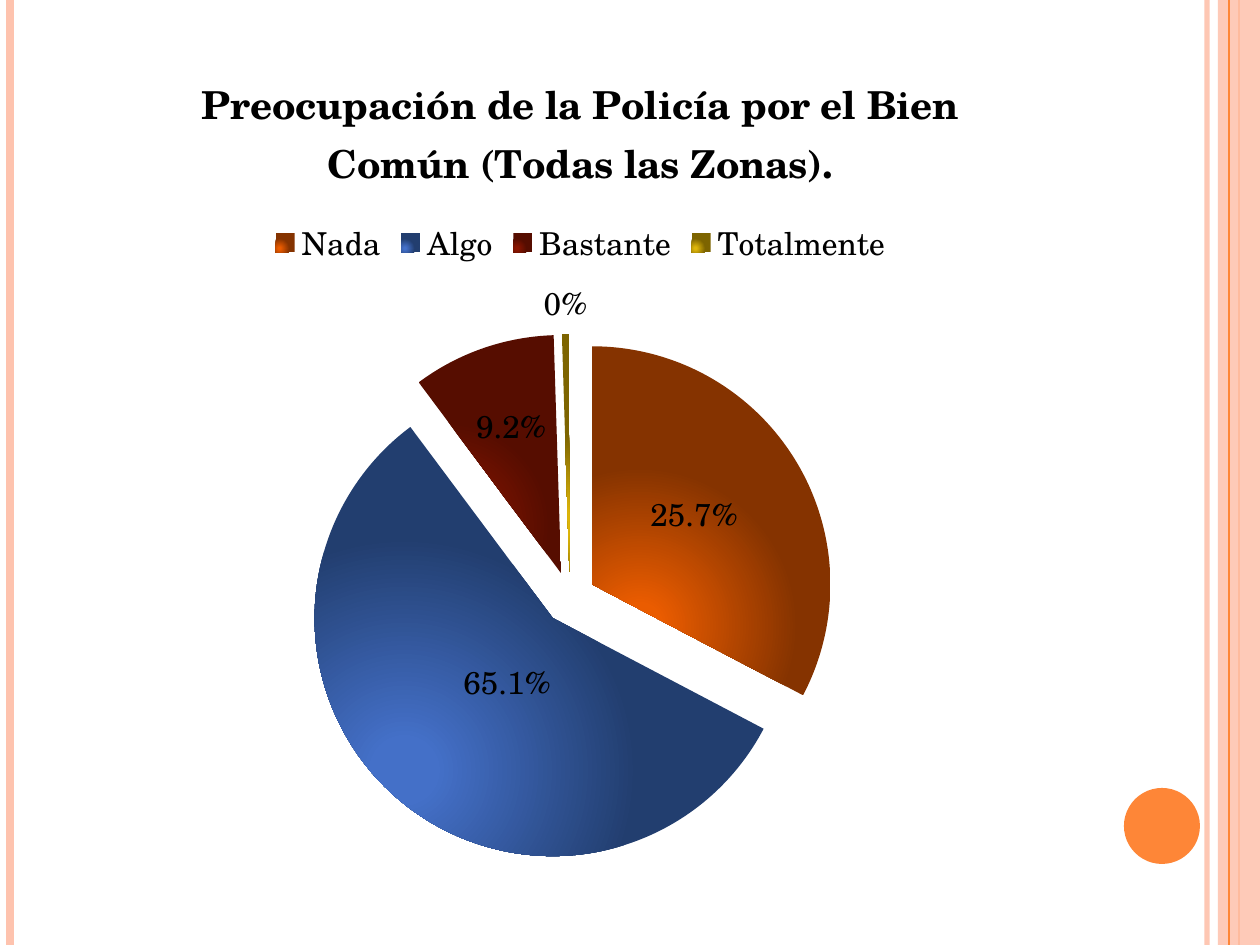
from lxml import etree
from pptx import Presentation
from pptx import util as u
from pptx.chart import data as chart_data
from pptx.dml.color import RGBColor
from pptx.enum import chart as ch, shapes
from pptx.oxml import parse_xml
from pptx.oxml import ns

PX = u.Inches(1) // 126
FONT = "TeX Gyre Schola"
PEACH, ORANGE = "FEC3AE", "FE8637"
TITLE = "Preocupación de la Policía por el Bien Común (Todas las Zonas)."
SHARES = {"Nada": 32.7, "Algo": 57.1, "Bastante": 9.7, "Totalmente": 0.5}
GRADIENTS = [("EA5C00", "853300"), ("4470C8", "223E6F"),
             ("8A1500", "560D00"), ("DDB50A", "7D6400")]
CENTER, OUTSIDE = ch.XL_LABEL_POSITION.CENTER, ch.XL_LABEL_POSITION.OUTSIDE_END
LABELS = [("25.7%", False, CENTER, 0, -0.01), ("65.1%", True, CENTER, 0.03, -0.03),
          ("9.2%", True, CENTER, -0.01, -0.04), ("0%", True, OUTSIDE, 0, 0)]


def px(*lengths):
    """Turn px lengths into EMU."""
    return [length * PX for length in lengths]


def rgb(code):
    """Return the colour of a hex string."""
    return RGBColor.from_string(code)


def set_font(font, size, bold=False):
    """Apply the slide's typeface in black."""
    font.name, font.size, font.bold = FONT, u.Pt(size), bold
    font.color.rgb = rgb("000000")


def set_opacity(fill_parent, percent):
    """Make the solid colour below an element partly transparent."""
    color = fill_parent.find(".//" + ns.qn("a:srgbClr"))
    etree.SubElement(color, ns.qn("a:alpha"), val=str(percent * 1000))


def add_rule(slide, x, height, color, width, opacity=100):
    """Draw one full-height vertical line."""
    rule = slide.shapes.add_connector(shapes.MSO_CONNECTOR.STRAIGHT, *px(x, 0, x, height))
    rule.line.color.rgb, rule.line.width = rgb(color), u.Pt(width)
    properties = rule._element.spPr
    if opacity < 100:
        set_opacity(properties, opacity)
    etree.SubElement(properties, ns.qn("a:effectLst"))


def add_solid(slide, kind, box, color, opacity=100):
    """Draw one borderless filled shape."""
    solid = slide.shapes.add_shape(kind, *px(*box))
    solid.shadow.inherit = False
    solid.fill.solid()
    solid.fill.fore_color.rgb = rgb(color)
    solid.line.fill.background()
    if opacity < 100:
        set_opacity(solid._element.spPr, opacity)


def add_frame(slide, width, height):
    """Decorate the side edges of the slide."""
    add_rule(slide, width - 53, height, PEACH, 3, 93)
    add_rule(slide, 10, height, PEACH, 4.5)
    add_rule(slide, width - 21, height, ORANGE, 1.5)
    add_solid(slide, shapes.MSO_SHAPE.RECTANGLE, (width - 42, 0, 42, height), PEACH, 87)
    add_rule(slide, width - 31, height, ORANGE, 0.75)
    add_solid(slide, shapes.MSO_SHAPE.OVAL, (width - 136, height - 157, 76, 76), ORANGE)


def manual_layout(x, y, width=None, height=None):
    """Build a chart layout, as an offset or as a whole inner box."""
    parts = [("x", x), ("y", y)]
    if width:
        parts = [("layoutTarget", "inner"), ("xMode", "edge"), ("yMode", "edge"),
                 *parts, ("w", width), ("h", height)]
    body = "".join(f'<c:{tag} val="{value}"/>' for tag, value in parts)
    return parse_xml(f'<c:layout {ns.nsdecls("c")}><c:manualLayout>{body}'
                     '</c:manualLayout></c:layout>')


def fill_slice(point, glow, shade):
    """Fill a slice with a radial gradient glowing at its lower left."""
    stops = "".join(f'<a:gs pos="{at}"><a:srgbClr val="{color}"/></a:gs>'
                    for at, color in ((0, glow), (10000, glow), (75000, shade), (100000, shade)))
    point.format.line.fill.background()
    point.format.fill.background()
    properties = point.format.fill._xPr
    plain = properties.find(ns.qn("a:noFill"))
    properties.replace(plain, parse_xml(
        f'<a:gradFill {ns.nsdecls("a")} rotWithShape="1"><a:gsLst>{stops}</a:gsLst>'
        '<a:path path="circle"><a:fillToRect l="20000" t="80000" r="80000" b="20000"/>'
        '</a:path></a:gradFill>'))


def label_slice(point, wording, bold, position, dx, dy):
    """Write a slice's percentage and nudge it from its default place."""
    label = point.data_label
    label.text_frame.text = wording
    set_font(label.text_frame.paragraphs[0].font, 18, bold)
    label.position = position
    if dx or dy:
        element = label._dLbl
        old = element.find(ns.qn("c:layout"))
        if old is not None:
            element.remove(old)
        element.insert(1, manual_layout(dx, dy))


def add_concern_pie(slide, box):
    """Place the exploded pie with its title and legend."""
    data = chart_data.CategoryChartData(number_format="0.0")
    data.categories = list(SHARES)
    data.add_series("Series 1", list(SHARES.values()))
    chart = slide.shapes.add_chart(ch.XL_CHART_TYPE.PIE, *px(*box), data).chart
    set_font(chart.font, 18)
    chart.has_title = True
    chart.chart_title.text_frame.text = TITLE
    set_font(chart.chart_title.text_frame.paragraphs[0].font, 22, True)
    chart.chart_title.include_in_layout = False
    chart.has_legend = True
    chart.legend.position = ch.XL_LEGEND_POSITION.TOP
    chart.legend.include_in_layout = False
    set_font(chart.legend.font, 18)

    plot = chart.plots[0]
    plot.vary_by_categories = True
    series = plot.series[0]
    for index, (gradient, label) in enumerate(zip(GRADIENTS, LABELS)):
        fill_slice(series.points[index], *gradient)
        label_slice(series.points[index], *label)
    labels = series.data_labels
    labels.show_percentage, labels.show_value = True, False
    labels.number_format, labels.number_format_is_linked = "0.0%", False
    set_font(labels.font, 18, True)
    explosion = parse_xml(f'<c:explosion {ns.nsdecls("c")} val="11"/>')
    series._element.find(ns.qn("c:dPt")).addprevious(explosion)

    area = chart._chartSpace.chart.plotArea
    old = area.find(ns.qn("c:layout"))
    if old is not None:
        area.remove(old)
    area.insert(0, manual_layout(0.24, 0.34, 0.5, 0.61))


def main():
    """Build and save the slide."""
    deck = Presentation()
    deck.slide_width, deck.slide_height = px(1260, 945)
    slide = deck.slides.add_slide(deck.slide_layouts[6])
    add_frame(slide, 1260, 945)
    add_concern_pie(slide, (49, 39, 1063, 867))
    deck.save("out.pptx")


if __name__ == "__main__":
    main()
